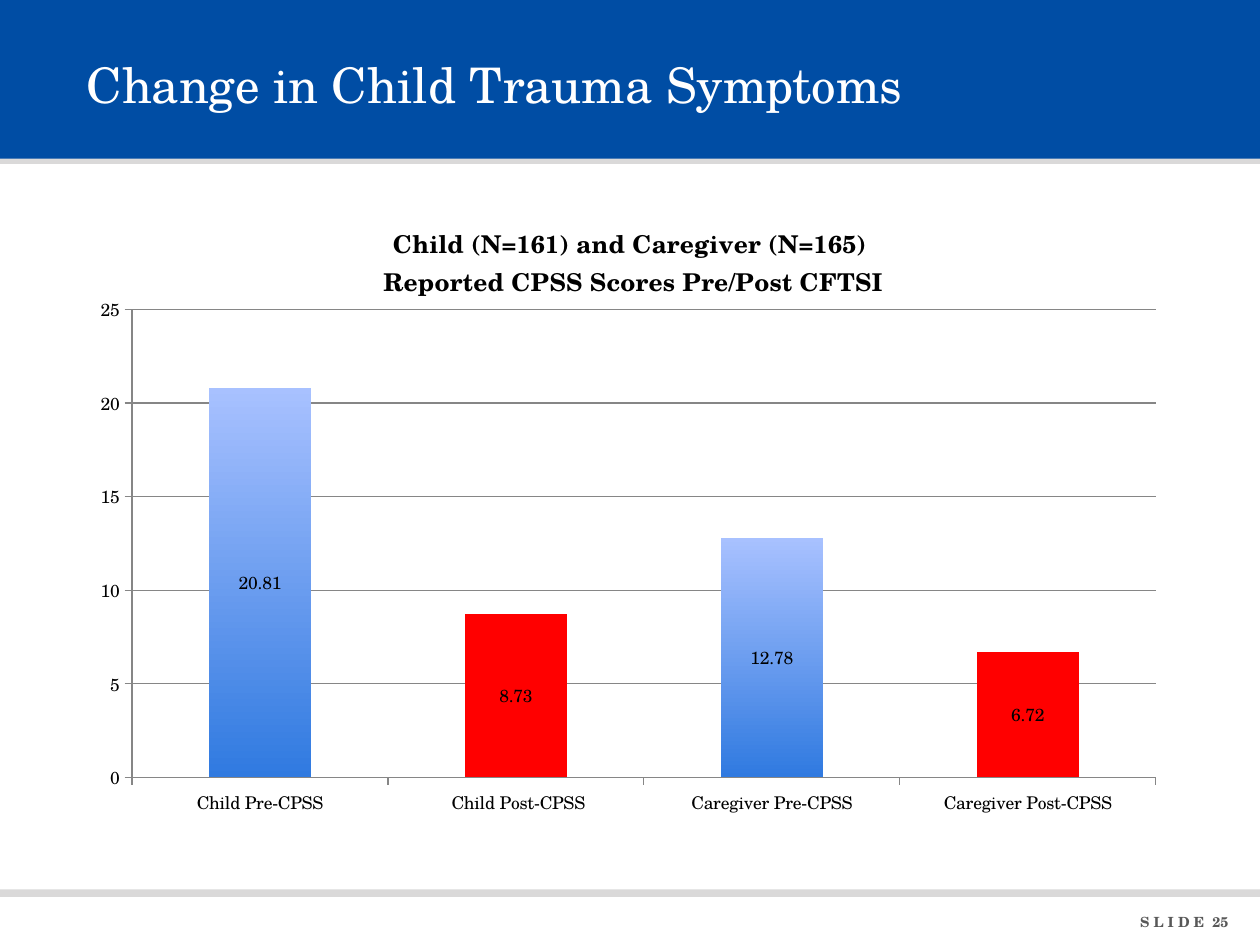
from lxml import etree
from pptx import Presentation
from pptx.chart.data import CategoryChartData
from pptx.dml.color import RGBColor
from pptx.enum.chart import XL_CHART_TYPE, XL_LABEL_POSITION, XL_TICK_MARK
from pptx.enum.shapes import MSO_SHAPE
from pptx.enum.text import MSO_ANCHOR, PP_ALIGN
from pptx.oxml.ns import qn
from pptx.util import Inches, Pt

COLUMN_CLUSTERED = XL_CHART_TYPE.COLUMN_CLUSTERED
LABEL_CENTER = XL_LABEL_POSITION.CENTER
TICK_OUTSIDE = XL_TICK_MARK.OUTSIDE
RECTANGLE = MSO_SHAPE.RECTANGLE
MIDDLE = MSO_ANCHOR.MIDDLE
TOP = MSO_ANCHOR.TOP
LEFT = PP_ALIGN.LEFT
RIGHT = PP_ALIGN.RIGHT

BLACK = RGBColor(0x00, 0x00, 0x00)
WHITE = RGBColor(0xFF, 0xFF, 0xFF)
BLUE = RGBColor(0x00, 0x4D, 0xA4)
RULE_GRAY = RGBColor(0xDA, 0xD9, 0xD9)
TEXT_GRAY = RGBColor(0x58, 0x58, 0x58)
AXIS_GRAY = RGBColor(0x86, 0x86, 0x86)
BAR_BOTTOM = RGBColor(0x30, 0x7A, 0xE0)
BAR_TOP = RGBColor(0xA8, 0xC1, 0xFF)
RED = RGBColor(0xFF, 0x00, 0x00)
FONT = "TeX Gyre Schola"


def style_font(font, size, color, bold=False):
    font.name = FONT
    font.size = Pt(size)
    font.color.rgb = color
    font.bold = bold


def add_text(slide, box, text, size, color, bold, alignment, anchor):
    shape = slide.shapes.add_textbox(*map(Inches, box))
    frame = shape.text_frame
    frame.word_wrap = True
    frame.vertical_anchor = anchor
    paragraph = frame.paragraphs[0]
    paragraph.text = text
    paragraph.alignment = alignment
    style_font(paragraph.font, size, color, bold)


presentation = Presentation()
presentation.slide_width = Inches(10)
presentation.slide_height = Inches(7.5)
slide = presentation.slides.add_slide(presentation.slide_layouts[6])

for top, height, color in [(1.05, 0.25, RULE_GRAY), (-0.01, 1.27, BLUE), (7.06, 0.06, RULE_GRAY)]:
    band = slide.shapes.add_shape(
        RECTANGLE, 0, Inches(top), presentation.slide_width, Inches(height)
    )
    band.shadow.inherit = False
    band.fill.solid()
    band.fill.fore_color.rgb = color
    band.line.fill.background()

add_text(slide, (8.43, 7.2, 1.42, 0.23), "S L I D E  25", 8, TEXT_GRAY, True, RIGHT, TOP)
add_text(slide, (0.59, 0.17, 8.9, 1), "Change in Child Trauma Symptoms", 28, WHITE, False, LEFT, MIDDLE)

chart_data = CategoryChartData()
chart_data.categories = [
    "Child Pre-CPSS", " Child Post-CPSS", "Caregiver Pre-CPSS", "Caregiver Post-CPSS"
]
chart_data.add_series("Series 1", (20.81, 8.73, 12.78, 6.72))
chart = slide.shapes.add_chart(
    COLUMN_CLUSTERED, Inches(0.56), Inches(1.58), Inches(8.88), Inches(5.1), chart_data
).chart
chart.has_legend = False
style_font(chart.font, 10, BLACK)

title_frame = chart.chart_title.text_frame
title_frame.text = "Child (N=161) and Caregiver (N=165)\n Reported CPSS Scores Pre/Post CFTSI"
for paragraph in title_frame.paragraphs:
    style_font(paragraph.font, 14, BLACK, True)
chart.chart_title.include_in_layout = False

for axis in (chart.category_axis, chart.value_axis):
    axis.major_tick_mark = TICK_OUTSIDE
    axis.format.line.color.rgb = AXIS_GRAY
    style_font(axis.tick_labels.font, 10, BLACK)
value_axis = chart.value_axis
value_axis.minimum_scale = 0
value_axis.maximum_scale = 25
value_axis.major_unit = 5
value_axis.has_major_gridlines = True
value_axis.major_gridlines.format.line.color.rgb = AXIS_GRAY

plot = chart.plots[0]
plot.gap_width = 150
plot.vary_by_categories = False
plot.has_data_labels = True
labels = plot.data_labels
labels.show_value = True
labels.position = LABEL_CENTER
style_font(labels.font, 10, BLACK)

series = plot.series[0]
series.invert_if_negative = False
bar_fill = series.format.fill
bar_fill.gradient()
bar_fill.gradient_angle = 90
for stop, color in zip(bar_fill.gradient_stops, (BAR_BOTTOM, BAR_TOP)):
    stop.color.rgb = color
for index in (1, 3):
    point_fill = series.points[index].format.fill
    point_fill.solid()
    point_fill.fore_color.rgb = RED

plot_area = chart.plots[0]._element.getparent()
for old_layout in plot_area.findall(qn("c:layout")):
    plot_area.remove(old_layout)
layout = etree.Element(qn("c:layout"))
manual_layout = etree.SubElement(layout, qn("c:manualLayout"))
for tag, value in [
    ("layoutTarget", "inner"), ("xMode", "edge"), ("yMode", "edge"),
    ("x", "0.055"), ("y", "0.172"), ("w", "0.915"), ("h", "0.728"),
]:
    etree.SubElement(manual_layout, qn(f"c:{tag}")).set("val", value)
plot_area.insert(0, layout)

presentation.save("out.pptx")
